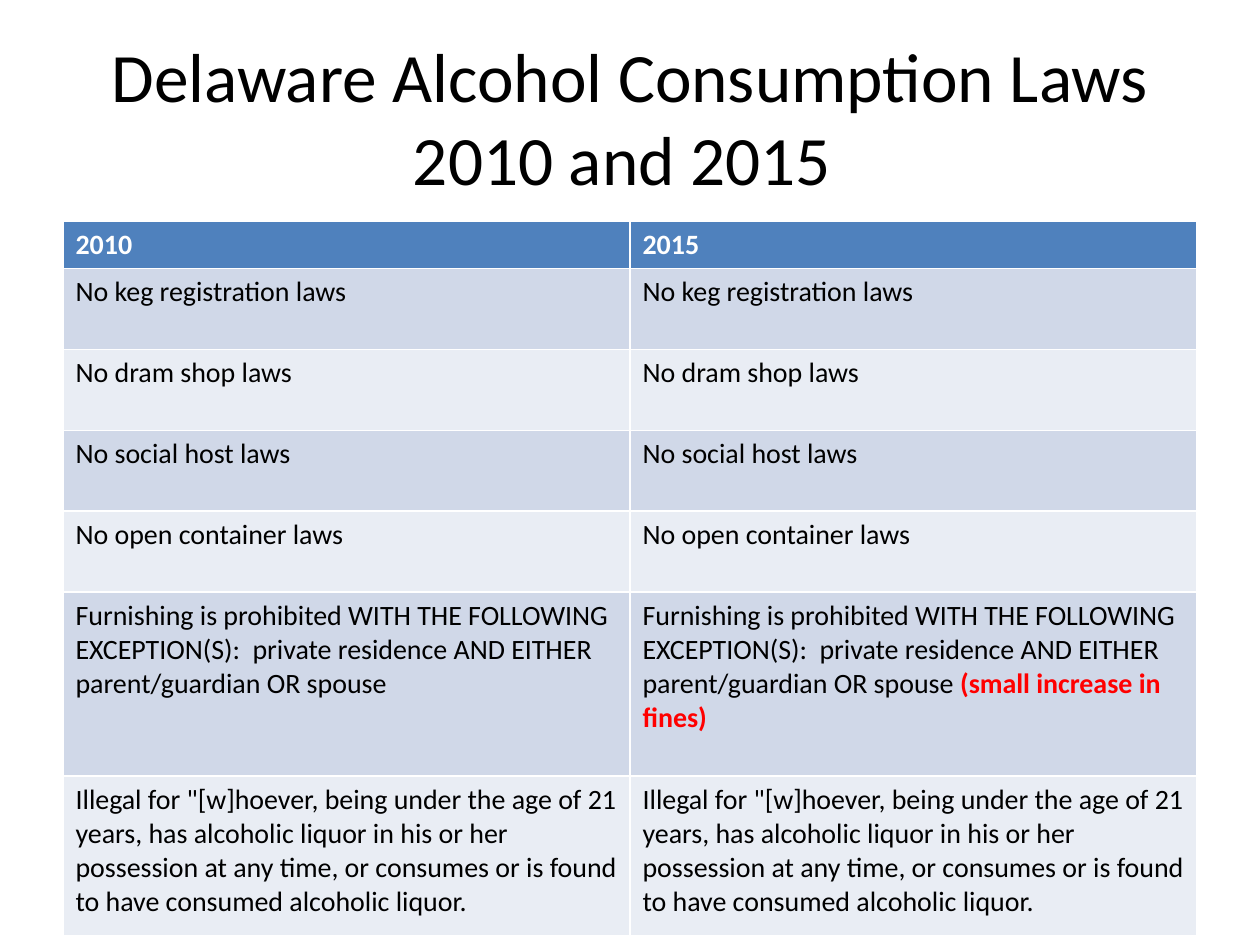
from pptx import Presentation
from pptx.dml.color import RGBColor
from pptx.enum.text import MSO_ANCHOR, PP_ALIGN
from pptx.util import Cm, Pt

FONT = "Calibri"
COLORS = {
    "text": "000000",
    "header_text": "FFFFFF",
    "change": "FF0000",
    "header": "4F81BD",
    "odd_row": "D0D8E8",
    "even_row": "E9EDF4",
}
TITLE = "Delaware Alcohol Consumption Laws 2010 and 2015 "
YEARS = ("2010", "2015")
FURNISHING = (
    "Furnishing is prohibited WITH THE FOLLOWING EXCEPTION(S):  "
    "private residence AND EITHER parent/guardian OR spouse"
)
POSSESSION = (
    'Illegal for "[w]hoever, being under the age of 21 years, has alcoholic '
    "liquor in his or her possession at any time, or consumes or is found to "
    "have consumed alcoholic liquor."
)
SHORT_LAWS = [
    f"No {topic} laws"
    for topic in ("keg registration", "dram shop", "social host", "open container")
]
LAWS = [
    *[(law, law) for law in SHORT_LAWS],
    (FURNISHING, FURNISHING + " "),
    (POSSESSION, POSSESSION),
]
FINES_NOTE = "(small increase in fines)"
ROW_HEIGHTS = [0.91] + [1.63] * len(SHORT_LAWS) + [3.71, 3.22]


def format_run(run, size, color, bold=False):
    """Apply font, size, colour and weight to a run."""
    run.font.name = FONT
    run.font.size = Pt(size)
    run.font.bold = bold
    run.font.color.rgb = RGBColor.from_string(COLORS[color])


def add_title(slide, left, top, width, height):
    """Place the centred slide title in the given box."""
    title = slide.shapes.title
    title.left, title.top, title.width, title.height = left, top, width, height
    text_frame = title.text_frame
    text_frame.text = TITLE
    text_frame.word_wrap = True
    text_frame.vertical_anchor = MSO_ANCHOR.MIDDLE
    paragraph = text_frame.paragraphs[0]
    paragraph.alignment = PP_ALIGN.CENTER
    format_run(paragraph.runs[0], 39.6, "text")


def add_law_table(slide, left, top, width):
    """Compare the laws of both years in a banded table."""
    rows = [YEARS, *LAWS]
    height = Cm(sum(ROW_HEIGHTS))
    table = slide.shapes.add_table(
        len(rows), len(YEARS), left, top, width, height
    ).table
    for row_index, texts in enumerate(rows):
        table.rows[row_index].height = Cm(ROW_HEIGHTS[row_index])
        is_header = row_index == 0
        band = "odd_row" if row_index % 2 else "even_row"
        for column_index, text in enumerate(texts):
            cell = table.cell(row_index, column_index)
            cell.fill.solid()
            cell.fill.fore_color.rgb = RGBColor.from_string(
                COLORS["header" if is_header else band]
            )
            paragraph = cell.text_frame.paragraphs[0]
            paragraph.text = text
            text_color = "header_text" if is_header else "text"
            format_run(paragraph.runs[0], 16, text_color, is_header)
    furnishing_row = 1 + len(SHORT_LAWS)
    note = table.cell(furnishing_row, 1).text_frame.paragraphs[0].add_run()
    note.text = FINES_NOTE
    format_run(note, 16, "change", True)


def main():
    """Build and save the presentation."""
    presentation = Presentation()
    presentation.slide_width, presentation.slide_height = Cm(25.4), Cm(19.05)
    slide = presentation.slides.add_slide(presentation.slide_layouts[5])
    margin, width = Cm(1.27), Cm(22.86)
    add_title(slide, margin, Cm(0.76), width, Cm(3.18))
    add_law_table(slide, margin, Cm(4.47), width)
    presentation.save("out.pptx")


if __name__ == "__main__":
    main()
